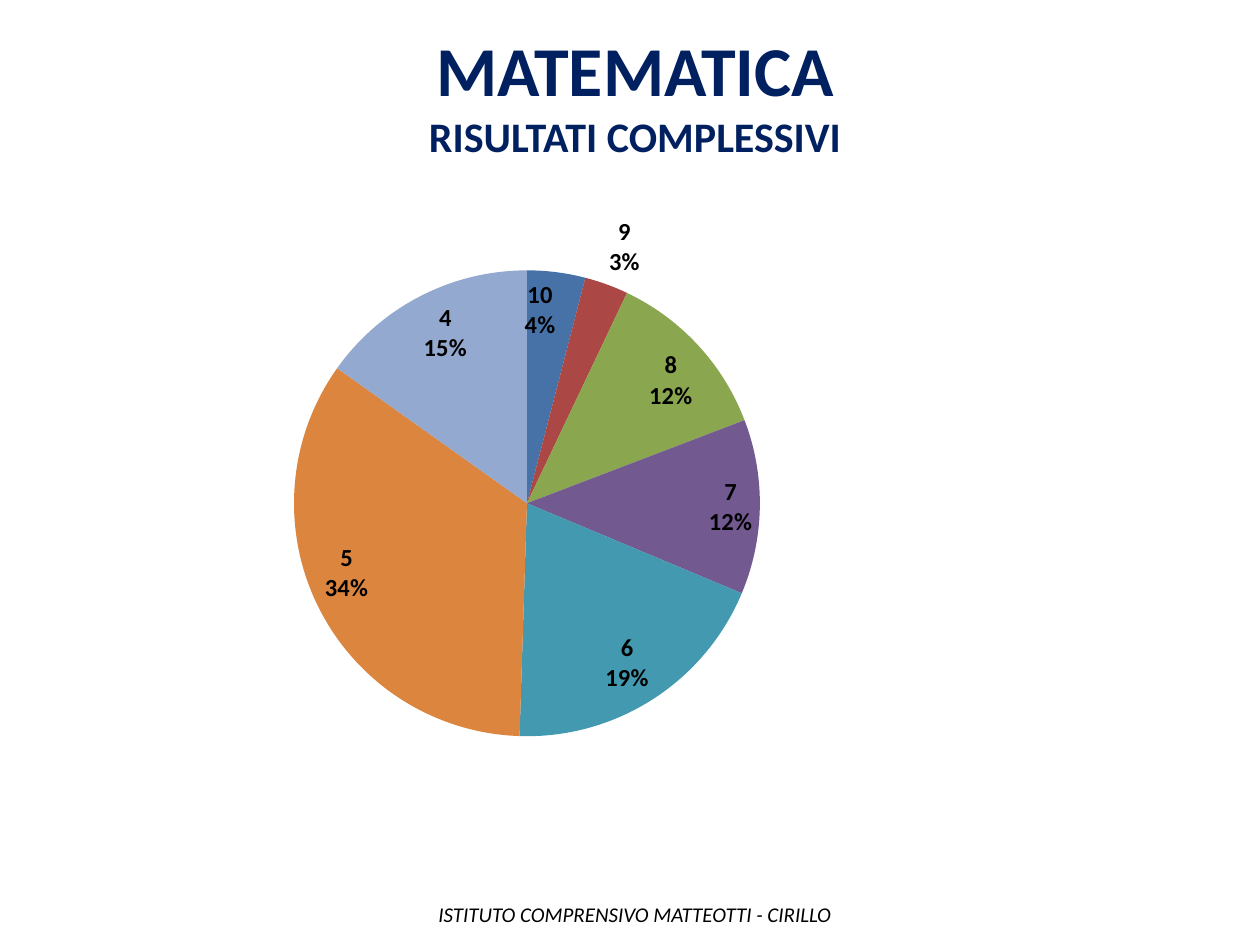
from dataclasses import dataclass

from lxml import etree
from pptx import Presentation
from pptx import util as u
from pptx.chart.data import CategoryChartData
from pptx.dml.color import RGBColor
from pptx.enum import chart as ch
from pptx.enum import text
from pptx.oxml.ns import qn


@dataclass(frozen=True)
class Theme:
    """Colours, font and type sizes of the slide."""
    font: str = "Calibri"
    navy: str = "002060"
    black: str = "000000"
    title: int = 40
    subtitle: int = 24
    label: int = 14
    footer: int = 12
    slices: tuple = ("4672A8", "AB4744", "8AA64F", "725990",
                     "4299B0", "DC853E", "93A9CF")


THEME = Theme()
RESULTS = {"10": 4, "9": 3, "8": 12, "7": 12, "6": 19, "5": 34, "4": 15}


def style_font(font, size, color=THEME.black, bold=False, italic=False):
    """Apply the theme font with the given format."""
    font.name = THEME.font
    font.size = u.Pt(size)
    font.bold = bold
    font.italic = italic
    font.color.rgb = RGBColor.from_string(color)


def add_text(tf, content, align=text.PP_ALIGN.LEFT, first=True, **fmt):
    """Write one formatted paragraph into a text frame."""
    p = tf.paragraphs[0] if first else tf.add_paragraph()
    p.alignment = align
    r = p.add_run()
    r.text = content
    style_font(r.font, **fmt)


def add_heading(s, box):
    """Place the subject and the subtitle, centred in the box."""
    tf = s.shapes.add_textbox(*box).text_frame
    tf.word_wrap = True
    lines = (("MATEMATICA", THEME.title), ("RISULTATI COMPLESSIVI", THEME.subtitle))
    for i, (content, size) in enumerate(lines):
        add_text(tf, content, text.PP_ALIGN.CENTER, first=i == 0,
                 size=size, color=THEME.navy, bold=True)


def add_footer(s, box):
    """Place the name of the school."""
    tf = s.shapes.add_textbox(*box).text_frame
    tf.word_wrap = False
    add_text(tf, "ISTITUTO COMPRENSIVO MATTEOTTI - CIRILLO",
             size=THEME.footer, italic=True)


def show_category_and_percent(labels):
    """Show category over percentage in a label element."""
    for tag, value in (("showVal", "0"), ("showCatName", "1"), ("showPercent", "1")):
        labels.find(qn(f"c:{tag}")).set("val", value)
    separator = etree.Element(qn("c:separator"))
    separator.text = "\n"
    last = labels.find(qn("c:showBubbleSize"))
    if last is None:
        last = labels.find(qn("c:showPercent"))
    last.addnext(separator)


def set_plot_layout(chart, **fractions):
    """Fix the inner plot area as fractions of the chart box."""
    area = chart.plots[0]._element.getparent()
    layout = area.find(qn("c:layout"))
    if layout is None:
        layout = etree.Element(qn("c:layout"))
        area.insert(0, layout)
    manual = etree.SubElement(layout, qn("c:manualLayout"))
    settings = {"layoutTarget": "inner", "xMode": "edge", "yMode": "edge", **fractions}
    for tag, value in settings.items():
        etree.SubElement(manual, qn(f"c:{tag}")).set("val", str(value))


def add_results_pie(s, box):
    """Place the pie of marks with labels inside, the smallest outside."""
    data = CategoryChartData()
    data.categories = list(RESULTS)
    data.add_series("Series 1", RESULTS.values())
    chart = s.shapes.add_chart(ch.XL_CHART_TYPE.PIE, *box, data).chart
    chart.has_legend = False
    chart.has_title = False
    style_font(chart.font, THEME.label, bold=True)
    set_plot_layout(chart, x=0.24, y=0.15, w=0.47, h=0.82)

    plot = chart.plots[0]
    plot.vary_by_categories = True
    series = plot.series[0]
    for i, color in enumerate(THEME.slices):
        fill = series.points[i].format.fill
        fill.solid()
        fill.fore_color.rgb = RGBColor.from_string(color)

    labels = series.data_labels
    style_font(labels.font, THEME.label, bold=True)
    labels.position = ch.XL_LABEL_POSITION.INSIDE_END
    show_category_and_percent(labels._element)

    smallest = list(RESULTS.values()).index(min(RESULTS.values()))
    label = series.points[smallest].data_label
    style_font(label.font, THEME.label, bold=True)
    label.position = ch.XL_LABEL_POSITION.OUTSIDE_END
    show_category_and_percent(labels._element.find(qn("c:dLbl")))


def inches(*lengths):
    """Turn left, top, width and height into lengths."""
    return [u.Inches(n) for n in lengths]


def main():
    """Build and save the slide."""
    prs = Presentation()
    prs.slide_width, prs.slide_height = inches(10, 7.5)
    s = prs.slides.add_slide(prs.slide_layouts[6])
    add_heading(s, inches(1.38, 0.16, 7.32, 1.18))
    add_footer(s, inches(3.38, 7.11, 3.45, 0.3))
    add_results_pie(s, inches(0.43, 1.47, 7.9, 4.51))
    prs.save("out.pptx")


if __name__ == "__main__":
    main()
